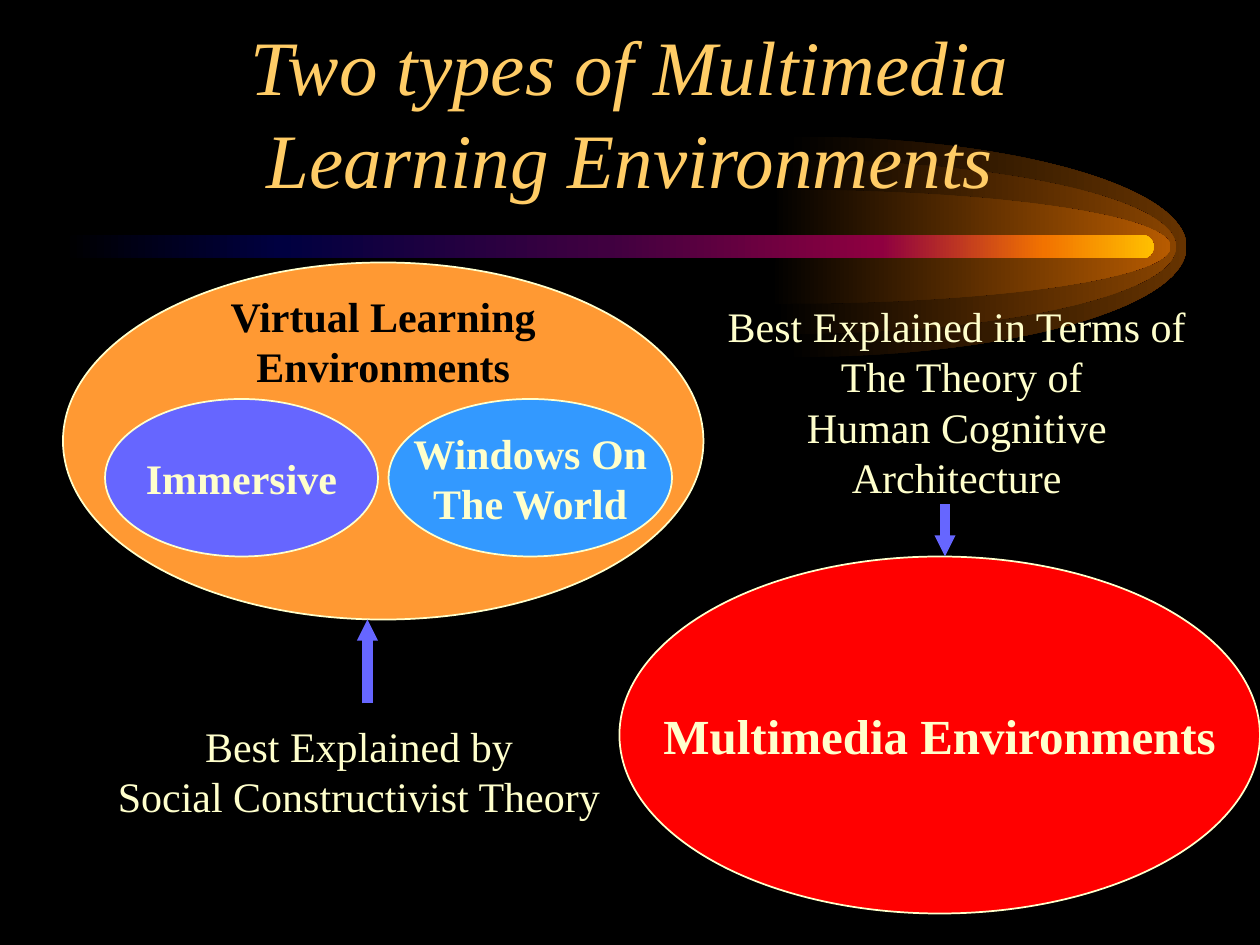
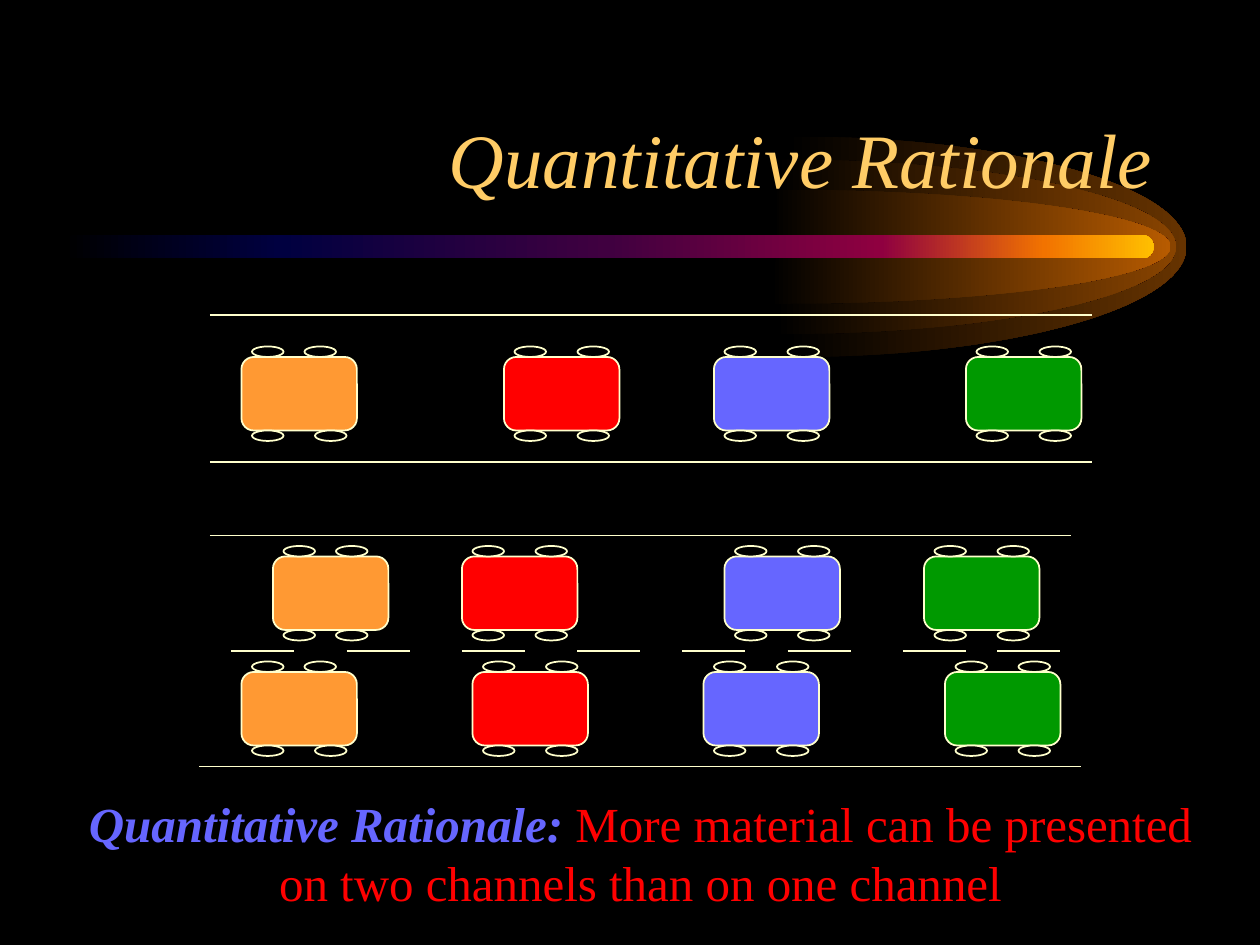
from lxml import etree
from pptx import Presentation
from pptx import util as u
from pptx.dml.color import RGBColor
from pptx.enum import shapes, text
from pptx.oxml.ns import qn

PX_PER_INCH = 96
FONT = "Times New Roman"
BLACK, CREAM, GOLD = "000000", "FFFFCC", "FFCC66"
ORANGE, RED, VIOLET, BLUE, GREEN = "FF9933", "FF0000", "6666FF", "3399FF", "009900"
CAR_COLOURS = (ORANGE, RED, VIOLET, GREEN)
CAR_WIDTH, CAR_HEIGHT = 88, 56
WHEEL_WIDTH, WHEEL_HEIGHT, WHEEL_INSET = 24, 8, 8
WHEEL_GAP, SHORT_WHEEL_GAP = 48, 40
DASH_LENGTH = 48
BAR_CENTRE = 188
CURVE = 0.55  # control-point distance that turns a cubic into a quarter ellipse

OVAL = shapes.MSO_SHAPE.OVAL
ROUNDED = shapes.MSO_SHAPE.ROUNDED_RECTANGLE
CENTRE = text.PP_ALIGN.CENTER
RIGHT = text.PP_ALIGN.RIGHT


def px(*lengths):
    return [u.Inches(length / PX_PER_INCH) for length in lengths]


def rgb(colour):
    return RGBColor.from_string(colour)


def add_span(para, words, size=24, colour=CREAM, bold=False, italic=False):
    span = para.add_run()
    span.text = words
    font = span.font
    font.name, font.size = FONT, u.Pt(size)
    font.bold, font.italic = bold, italic
    font.color.rgb = rgb(colour)


def write(frame, *lines, align=CENTRE, wrap=False, anchor=None, **style):
    """Fill a text frame with one paragraph for each line."""
    frame.word_wrap = wrap
    frame.auto_size = text.MSO_AUTO_SIZE.NONE
    if anchor is not None:
        frame.vertical_anchor = anchor
    for number, words in enumerate(lines):
        para = frame.add_paragraph() if number else frame.paragraphs[0]
        para.alignment = align
        add_span(para, words, **style)


def add_label(page, bounds, *lines, **style):
    box = page.shapes.add_textbox(*px(*bounds))
    write(box.text_frame, *lines, **style)
    return box


def add_block(page, kind, bounds, fill, *lines, **style):
    """Draw a cream-edged shape, with centred text if lines are given."""
    block = page.shapes.add_shape(kind, *px(*bounds))
    block.shadow.inherit = False
    block.fill.solid()
    block.fill.fore_color.rgb = rgb(fill)
    block.line.color.rgb = rgb(CREAM)
    block.line.width = u.Pt(1)
    if lines:
        write(block.text_frame, *lines, bold=True,
              anchor=text.MSO_ANCHOR.MIDDLE, **style)
    return block


def add_line(page, start, end, colour=CREAM, width=1, arrow=False):
    line = page.shapes.add_connector(
        shapes.MSO_CONNECTOR.STRAIGHT, *px(*start, *end))
    line.line.color.rgb = rgb(colour)
    line.line.width = u.Pt(width)
    properties = line.element.spPr
    if arrow:
        etree.SubElement(properties.find(qn("a:ln")), qn("a:tailEnd"),
                         type="triangle", w="sm", len="sm")
    etree.SubElement(properties, qn("a:effectLst"))


def fill_gradient(shape, stops):
    """Fill from left to right with (percent, colour) stops and no outline."""
    shape.shadow.inherit = False
    shape.line.fill.background()
    shape.fill.gradient()
    shape.fill.gradient_angle = 0
    stop_list = shape.element.spPr.find(".//" + qn("a:gsLst"))
    stop_list.clear()
    for percent, colour in stops:
        stop = etree.SubElement(stop_list, qn("a:gs"), pos=str(percent * 1000))
        etree.SubElement(stop, qn("a:srgbClr"), val=colour)


def curve_segments(shape, count):
    """Turn the first straight segments, three at a time, into cubic curves."""
    segments = shape.element.spPr.findall(".//" + qn("a:lnTo"))
    for first in range(0, 3 * count, 3):
        curve = etree.Element(qn("a:cubicBezTo"))
        segments[first].addprevious(curve)
        for segment in segments[first:first + 3]:
            curve.append(segment[0])
            segment.getparent().remove(segment)


def add_glow(page, left, height, colour):
    """Draw the right half of an ellipse around the bar's end."""
    hub, radius_x, radius_y = left + 5, 300, height / 2
    top, bottom, right = BAR_CENTRE - radius_y, BAR_CENTRE + radius_y, hub + radius_x
    reach_x, reach_y = CURVE * radius_x, CURVE * radius_y
    outline = [(hub + reach_x, top), (right, BAR_CENTRE - reach_y), (right, BAR_CENTRE),
               (right, BAR_CENTRE + reach_y), (hub + reach_x, bottom), (hub, bottom),
               (left, bottom), (hub, BAR_CENTRE)]
    builder = page.shapes.build_freeform(*px(hub, top))
    builder.add_line_segments([px(*point) for point in outline], close=True)
    glow = builder.convert_to_shape()
    curve_segments(glow, 2)
    fill_gradient(glow, [(0, BLACK), (100, colour)])
    return glow


def add_bar(page):
    bar = page.shapes.add_shape(ROUNDED, *px(48, 179, 831, 18))
    bar.adjustments[0] = 0.5
    fill_gradient(bar, [(0, BLACK), (20, "000040"), (50, "400040"),
                        (75, "8F0040"), (90, "F27300"), (100, "FFBF00")])
    return bar


def style_layout(layout, page):
    """Give the layout its background, comet and title place.

    Layouts cannot draw shapes, so the comet is drawn on a page and moved.
    """
    layout.background.fill.solid()
    layout.background.fill.fore_color.rgb = rgb(BLACK)
    comet = [add_glow(page, 599, 168, "663300"), add_glow(page, 591, 133, "894400"),
             add_glow(page, 587, 87, "B75B00"), add_bar(page)]
    for position, part in enumerate(comet, start=2):
        layout.shapes.element.insert(position, part.element)
    title = layout.placeholders[0]
    title.left, title.top, title.width, title.height = px(72, 40, 816, 120)


def add_title(page, words, align):
    write(page.shapes.title.text_frame, words, align=align, wrap=True,
          anchor=text.MSO_ANCHOR.BOTTOM, size=44, colour=GOLD, italic=True)


def add_car(page, left, top, colour, front_gap, back_gap):
    add_block(page, ROUNDED, (left, top, CAR_WIDTH, CAR_HEIGHT), colour)
    for wheel_top, gap in ((top - WHEEL_HEIGHT, front_gap), (top + CAR_HEIGHT, back_gap)):
        for offset in (0, gap):
            add_block(page, OVAL, (left + WHEEL_INSET + offset, wheel_top,
                                   WHEEL_WIDTH, WHEEL_HEIGHT), BLACK)


def add_lane(page, top, lefts, first_back_gap=WHEEL_GAP):
    """Draw one car of each colour; the first has closer wheels."""
    for number, (left, colour) in enumerate(zip(lefts, CAR_COLOURS)):
        gaps = (WHEEL_GAP, WHEEL_GAP) if number else (SHORT_WHEEL_GAP, first_back_gap)
        add_car(page, left, top, colour, *gaps)


def build_environments(page):
    add_title(page, "Two types of Multimedia Learning Environments", CENTRE)
    virtual = add_block(page, OVAL, (48, 200, 488, 272), ORANGE,
                        "Virtual Learning", "Environments", colour=BLACK)
    virtual.text_frame.margin_top, virtual.text_frame.margin_bottom = px(0, 153)
    add_block(page, OVAL, (296, 304, 216, 120), BLUE, "Windows On", "The World")
    add_block(page, OVAL, (472, 424, 488, 272), RED, "Multimedia Environments", size=28)
    add_block(page, OVAL, (80, 304, 208, 120), VIOLET, "Immersive")
    add_line(page, (280, 536), (280, 472), VIOLET, 6, arrow=True)
    add_label(page, (80, 544, 387, 86), "Best Explained by", "Social Constructivist Theory")
    add_line(page, (720, 384), (720, 424), VIOLET, 6, arrow=True)
    add_label(page, (543, 224, 372, 163), "Best Explained in Terms of", " The Theory of",
              "Human Cognitive", "Architecture")


def build_rationale(page):
    add_title(page, "Quantitative Rationale", RIGHT)
    caption = add_label(page, (48, 600, 880, 144), "Quantitative Rationale: ", wrap=True,
                        size=28, colour=VIOLET, bold=True, italic=True)
    add_span(caption.text_frame.paragraphs[0],
             "More material can be presented on two channels than on one channel",
             size=28, colour=RED)
    for left, right, height in ((160, 832, 240), (160, 832, 352),
                                (160, 816, 408), (152, 824, 584)):
        add_line(page, (left, height), (right, height))
    for left in (176, 264, 352, 440, 520, 600, 688, 760):
        add_line(page, (left, 496), (left + DASH_LENGTH, 496))
    add_lane(page, 272, (184, 384, 544, 736))
    add_lane(page, 424, (208, 352, 552, 704), first_back_gap=SHORT_WHEEL_GAP)
    add_lane(page, 512, (184, 360, 536, 720))


def main():
    deck = Presentation()
    deck.slide_width, deck.slide_height = px(960, 720)
    layout = deck.slide_layouts.get_by_name("Title Only")
    environments, rationale = [deck.slides.add_slide(layout) for _ in range(2)]
    style_layout(layout, environments)
    build_environments(environments)
    build_rationale(rationale)
    deck.save("out.pptx")


if __name__ == "__main__":
    main()
